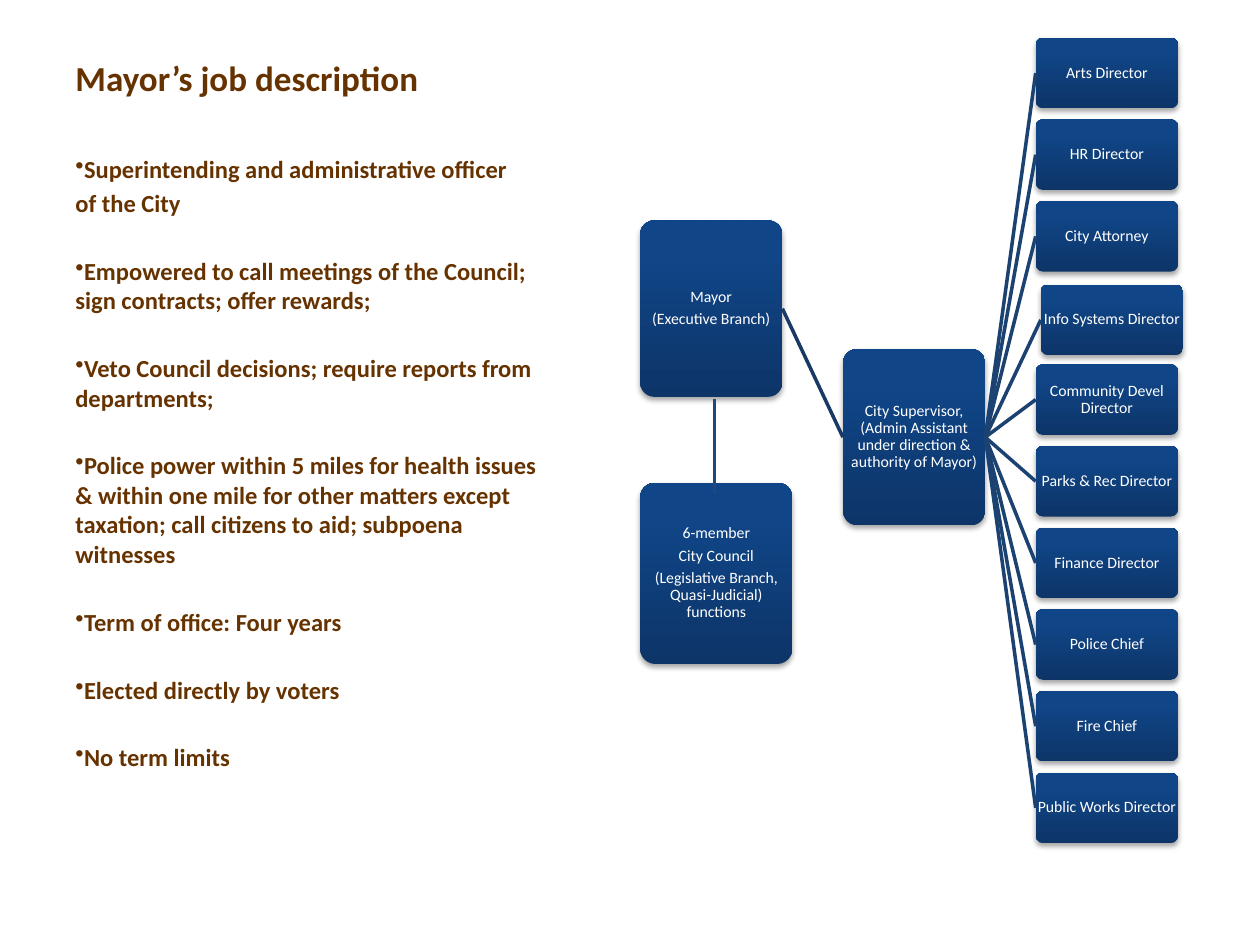
from pptx import Presentation
from pptx.dml.color import RGBColor
from pptx.enum.shapes import MSO_CONNECTOR, MSO_SHAPE
from pptx.enum.text import MSO_ANCHOR, PP_ALIGN
from pptx.oxml import parse_xml
from pptx.oxml.ns import nsdecls
from pptx.util import Inches, Pt

COLUMNS, ROWS = 100, 75
BROWN, WHITE = "663300", "FFFFFF"
NAVY, STEEL, SLATE = "193A64", "1C4271", "1F497D"
GRADIENT = ((0, "0D3568"), (80, "104587"), (100, "0E458A"))
TOP, LEFT, BOTTOM, RIGHT = range(4)
LABEL_LIMIT = 22

DUTIES = (
    ("Superintending and administrative officer", True),
    ("of the City", False),
    ("Empowered to call meetings of the Council; sign contracts; offer rewards;", True),
    ("Veto Council decisions; require reports from departments;", True),
    ("Police power within 5 miles for health issues & within one mile for other "
     "matters except taxation; call citizens to aid; subpoena witnesses", True),
    ("Term of office: Four years", True),
    ("Elected directly by voters", True),
    ("No term limits", True),
)
DIRECTORS = (
    "Arts Director", "HR Director", "City Attorney", "Info Systems Director",
    "Community Devel Director", "Parks & Rec Director", "Finance Director",
    "Police Chief", "Fire Chief", "Public Works Director",
)
NUDGES = {"Info Systems Director": (0.4, 0.15)}


def color(value):
    return RGBColor.from_string(value)


def write(frame, text, size=9, fill=WHITE, bold=False, align=PP_ALIGN.LEFT,
          line_spacing=None, before=0, after=0, bullet=False):
    first = not frame.paragraphs[0].runs
    paragraph = frame.paragraphs[0] if first else frame.add_paragraph()
    if bullet:
        properties = paragraph._p.get_or_add_pPr()
        properties.append(parse_xml(f'<a:buChar {nsdecls("a")} char="•"/>'))
    paragraph.alignment = align
    paragraph.line_spacing = line_spacing
    paragraph.space_before = Pt(0 if first else before)
    paragraph.space_after = Pt(after)
    run = paragraph.add_run()
    run.text = text
    run.font.name = "Calibri"
    run.font.size = Pt(size)
    run.font.bold = bold
    run.font.color.rgb = color(fill)


class Board:
    def __init__(self, presentation):
        self.slide = presentation.slides.add_slide(presentation.slide_layouts[6])
        self.column = presentation.slide_width / COLUMNS
        self.row = presentation.slide_height / ROWS

    def place(self, *lengths):
        units = (self.column, self.row) * 2
        return [round(length * unit) for length, unit in zip(lengths, units)]

    def text(self, *area, anchor=MSO_ANCHOR.TOP):
        frame = self.slide.shapes.add_textbox(*self.place(*area)).text_frame
        frame.word_wrap = True
        frame.vertical_anchor = anchor
        return frame

    def box(self, area, lines, wrap=True):
        shape = self.slide.shapes.add_shape(MSO_SHAPE.ROUNDED_RECTANGLE, *self.place(*area))
        shape.adjustments[0] = 0.1
        shape.line.fill.background()
        self.shade(shape)
        frame = shape.text_frame
        frame.word_wrap = wrap
        frame.vertical_anchor = MSO_ANCHOR.MIDDLE
        frame.margin_left = frame.margin_right = Inches(0.01)
        frame.margin_top = frame.margin_bottom = Inches(0.01)
        for line in lines:
            write(frame, line, align=PP_ALIGN.CENTER, line_spacing=0.9, after=3)
        return shape

    def shade(self, shape):
        stops = "".join(
            f'<a:gs pos="{share * 1000}"><a:srgbClr val="{value}"/></a:gs>'
            for share, value in GRADIENT)
        properties = shape._element.spPr
        properties.prstGeom.addnext(parse_xml(
            f'<a:gradFill {nsdecls("a")} rotWithShape="1"><a:gsLst>{stops}</a:gsLst>'
            '<a:lin ang="16200000" scaled="0"/></a:gradFill>'))
        properties.append(parse_xml(
            f'<a:effectLst {nsdecls("a")}>'
            f'<a:outerShdw blurRad="{Pt(3.1)}" dist="{Pt(1.8)}" dir="5400000" rotWithShape="0">'
            '<a:srgbClr val="000000"><a:alpha val="35000"/></a:srgbClr>'
            '</a:outerShdw></a:effectLst>'))

    def line(self, start, end, stroke, width):
        connector = self.slide.shapes.add_connector(
            MSO_CONNECTOR.STRAIGHT, *self.place(*start, *end))
        connector.line.color.rgb = color(stroke)
        connector.line.width = Pt(width)
        connector._element.spPr.append(parse_xml(f'<a:effectLst {nsdecls("a")}/>'))
        return connector

    def join(self, source, target, stroke):
        connector = self.line((0, 0), (0, 0), stroke, 2)
        connector.begin_connect(source, RIGHT)
        connector.end_connect(target, LEFT)


def main():
    presentation = Presentation()
    presentation.slide_width = Inches(10)
    presentation.slide_height = Inches(7.5)
    board = Board(presentation)

    title = board.text(5, 3, 32.9, 5.3, anchor=MSO_ANCHOR.BOTTOM)
    write(title, "Mayor’s job description", size=20, fill=BROWN, bold=True)

    duties = board.text(5, 11.7, 40, 55.3)
    for duty, bullet in DUTIES:
        write(duties, duty, size=14, fill=BROWN, bold=True,
              before=22 if bullet else 2.8, bullet=bullet)

    mayor = board.box((50.8, 17.5, 11.3, 14), ("Mayor", "(Executive Branch)"))
    supervisor = board.box(
        (66.9, 27.7, 11.3, 14),
        ("City Supervisor, (Admin Assistant under direction & authority of Mayor)",))
    board.join(mayor, supervisor, NAVY)

    for index, director in enumerate(DIRECTORS):
        right, down = NUDGES.get(director, (0, 0))
        area = (82.2 + right, 3 + 6.48 * index + down, 11.3, 5.6)
        box = board.box(area, (director,), wrap=len(director) > LABEL_LIMIT)
        board.join(supervisor, box, STEEL)

    board.box((50.8, 38.3, 12.1, 14.4),
              ("6-member", "City Council", "(Legislative Branch, Quasi-Judicial) functions"))
    board.line((56.7, 31.7), (56.7, 39.2), SLATE, 1.5)

    presentation.save("out.pptx")


if __name__ == "__main__":
    main()
